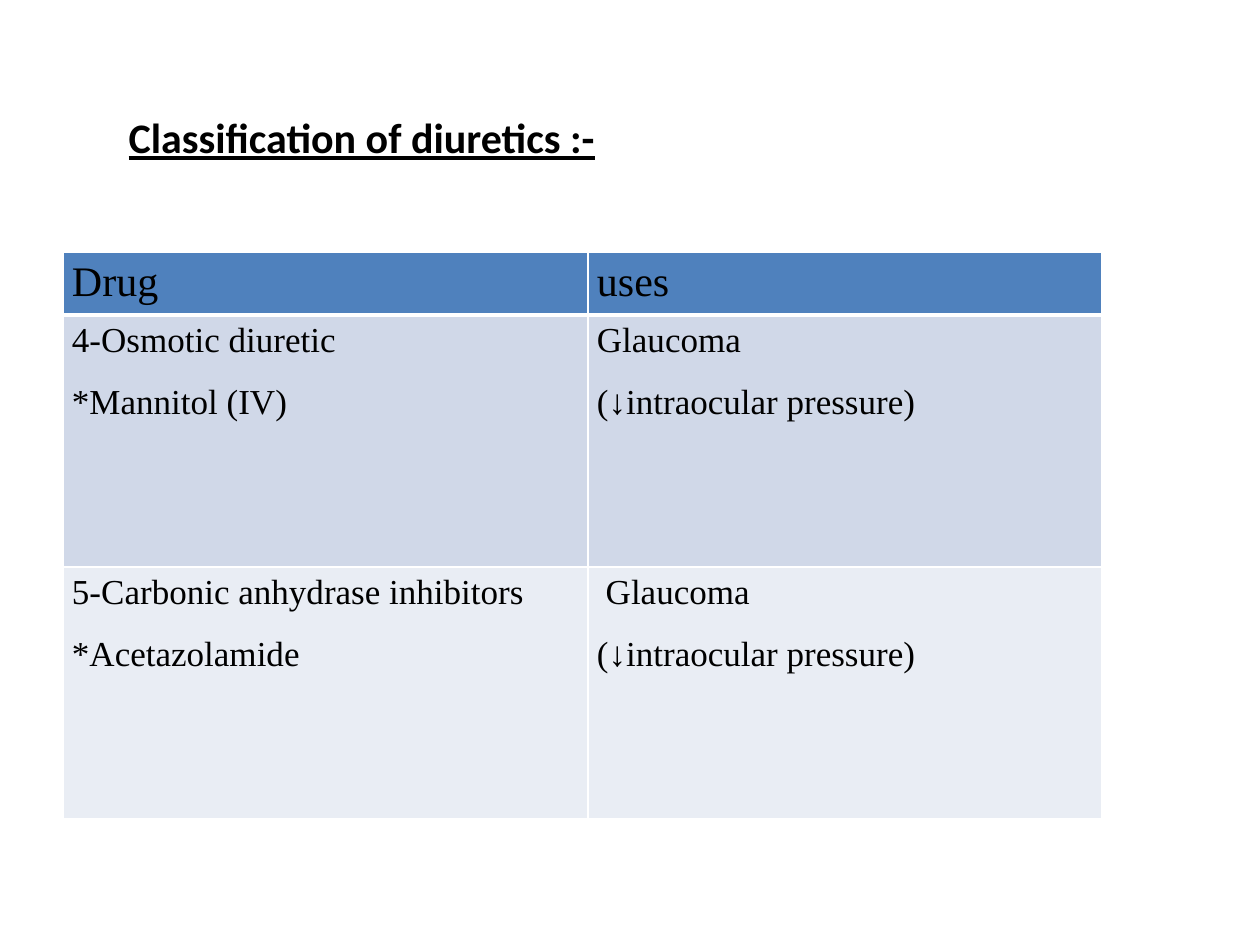
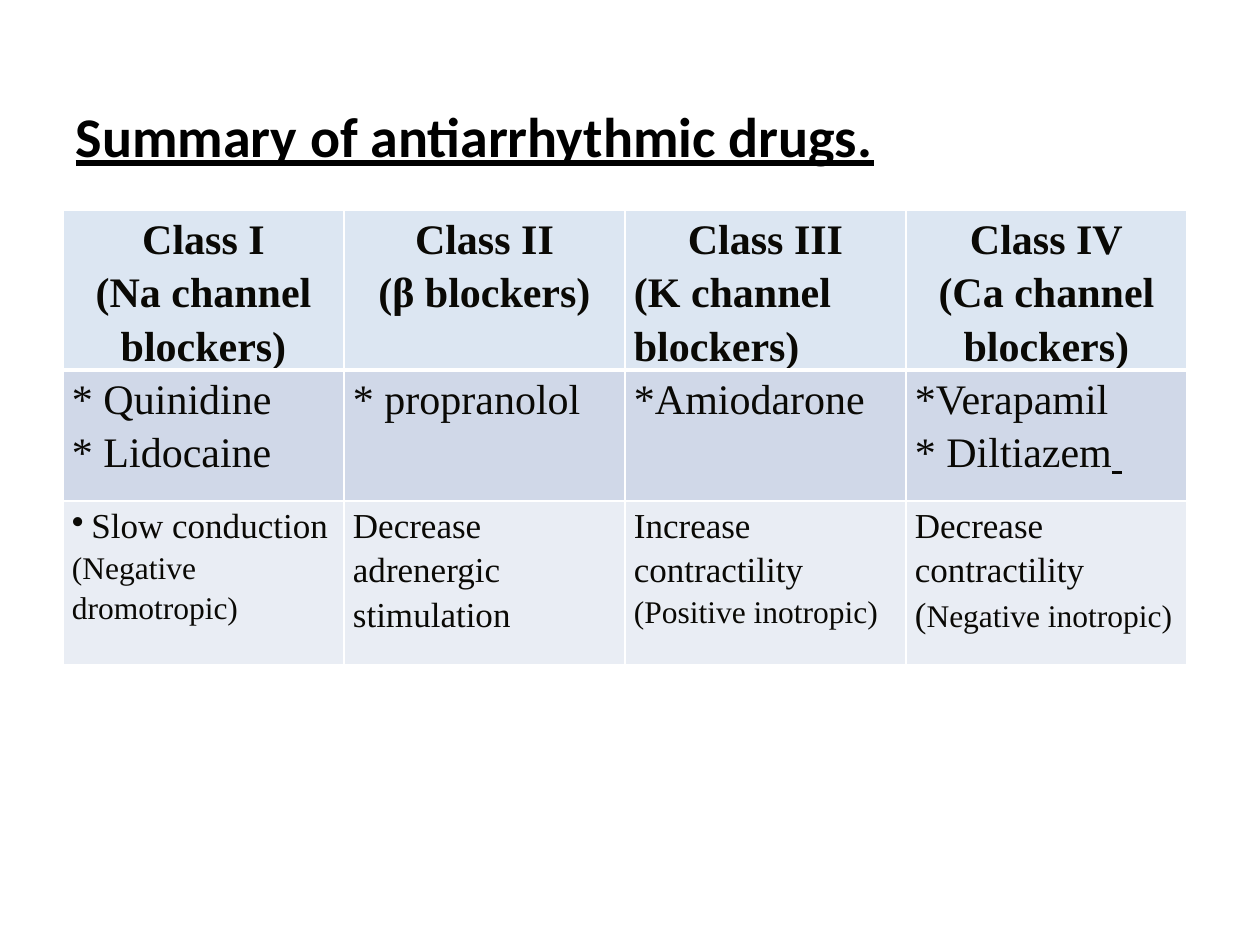
from dataclasses import dataclass

from lxml.etree import SubElement
from pptx import Presentation
from pptx.dml.color import RGBColor
from pptx.enum.text import MSO_ANCHOR as Anchor
from pptx.enum.text import MSO_AUTO_SIZE as AutoSize
from pptx.enum.text import PP_ALIGN as Align
from pptx.oxml import parse_xml
from pptx.oxml.ns import nsdecls, qn
from pptx.util import Emu, Pt

PX = 914400 // 126
COLORS = {
    "title": "000000",
    "drug_text": "000000",
    "class_text": "0A0905",
    "drug_header": "4F81BD",
    "class_header": "DCE6F2",
    "band_dark": "D0D8E8",
    "band_light": "E9EDF4",
    "border": "FFFFFF",
}
TITLE_FONT = "Calibri"
TABLE_FONT = "Times New Roman"
TITLE_ONLY = 5
CELL_INSET = 9


@dataclass
class Span:
    text: str
    size: int
    bold: bool = False
    underline: bool = False


@dataclass
class Para:
    spans: list
    align: Align = Align.LEFT
    bullet: str = ""


@dataclass
class TableStyle:
    header: str
    color: str
    space_after: int = 0


def px(length):
    return Emu(length * PX)


def rgb(name):
    return RGBColor.from_string(COLORS[name])


def line(text, size, align=Align.LEFT, bold=False, bullet=""):
    """A paragraph made of a single span."""
    return Para([Span(text, size, bold)], align, bullet)


def class_head(name, blockers, align=Align.CENTER):
    return [line(name, 24, Align.CENTER, True), line(blockers, 24, align, True)]


def add_span(para, span, font_name, color):
    run = para.add_run()
    run.text = span.text
    font = run.font
    font.name, font.size = font_name, Pt(span.size)
    font.bold, font.underline = span.bold, span.underline
    font.color.rgb = rgb(color)


def add_title(page, text, size, left, top, width, height):
    box = page.shapes.title
    box.left, box.top, box.width, box.height = map(px, (left, top, width, height))
    frame = box.text_frame
    frame.word_wrap = True
    frame.auto_size = AutoSize.NONE
    frame.vertical_anchor = Anchor.TOP
    para = frame.paragraphs[0]
    para.alignment = Align.LEFT
    add_span(para, Span(text, size, True, True), TITLE_FONT, "title")


def set_borders(cell, bottom):
    """White lines on all four sides, placed ahead of the cell's fill."""
    properties = cell._tc.get_or_add_tcPr()
    sides = {"lnL": 1, "lnR": 1, "lnT": 1, "lnB": bottom}
    for place, (side, width) in enumerate(sides.items()):
        properties.insert(place, parse_xml(
            f'<a:{side} {nsdecls("a")} w="{Pt(width)}"><a:solidFill>'
            f'<a:srgbClr val="{COLORS["border"]}"/></a:solidFill></a:{side}>'))


def fill_cell(cell, paras, fill, bottom, style):
    cell.fill.solid()
    cell.fill.fore_color.rgb = rgb(fill)
    cell.margin_left = cell.margin_right = px(CELL_INSET)
    cell.margin_top = cell.margin_bottom = 0
    set_borders(cell, bottom)
    frame = cell.text_frame
    for number, content in enumerate(paras):
        para = frame.add_paragraph() if number else frame.paragraphs[0]
        para.alignment = content.align
        para.line_spacing = 1.15
        para.space_after = Pt(style.space_after)
        if content.bullet:
            SubElement(para._p.get_or_add_pPr(), qn("a:buChar"), char=content.bullet)
        for span in content.spans:
            add_span(para, span, TABLE_FONT, style.color)


def add_drug_table(page, left, top, widths, heights, rows, style):
    table = page.shapes.add_table(
        len(heights), len(widths), px(left), px(top),
        px(sum(widths)), px(sum(heights))).table
    for column, width in zip(table.columns, widths):
        column.width = px(width)
    for row, height in zip(table.rows, heights):
        row.height = px(height)
    fills = [style.header, "band_dark", "band_light"]
    for row, contents, fill in zip(table.rows, rows, fills):
        bottom = 3 if fill == style.header else 1
        for cell, paras in zip(row.cells, contents):
            fill_cell(cell, paras, fill, bottom, style)


def build_diuretics(deck):
    page = deck.slides.add_slide(deck.slide_layouts[TITLE_ONLY])
    add_title(page, "Classification of diuretics :-", 24, 116, 105, 819, 63)
    pressure = line("(↓intraocular pressure)", 20)
    rows = [
        [[line("Drug", 24)], [line("uses", 24)]],
        [[line("4-Osmotic diuretic", 20), line("*Mannitol (IV)", 20)],
         [line("Glaucoma", 20), pressure]],
        [[line("5-Carbonic anhydrase inhibitors", 20), line("*Acetazolamide", 20)],
         [line(" Glaucoma", 20), pressure]],
    ]
    style = TableStyle("drug_header", "drug_text", space_after=10)
    add_drug_table(page, 63, 252, [525, 514], [63, 252, 252], rows, style)


def build_antiarrhythmics(deck):
    page = deck.slides.add_slide(deck.slide_layouts[TITLE_ONLY])
    add_title(page, "Summary of antiarrhythmic drugs.", 32, 63, 95, 1134, 750)
    rows = [
        # Classes
        [class_head("Class I", "(Na channel blockers)"),
         class_head("Class II", "(β blockers)"),
         class_head("Class III", "(K channel blockers)", Align.LEFT),
         class_head("Class IV", "(Ca channel blockers)")],
        # Drugs
        [[line("* Quinidine", 24), line("* Lidocaine", 24)],
         [line("* propranolol", 24)],
         [line("*Amiodarone", 24)],
         [line("*Verapamil", 24),
          Para([Span("* Diltiazem", 24), Span(" ", 24, True, True)])]],
        # Effects
        [[line("Slow conduction", 20, Align.CENTER, bullet="•"),
          line("(Negative dromotropic)", 18)],
         [line("Decrease adrenergic stimulation", 20)],
         [line("Increase contractility", 20), line("(Positive inotropic)", 18)],
         [line("Decrease contractility", 20),
          Para([Span("(", 20), Span("Negative inotropic)", 18)])]],
    ]
    style = TableStyle("class_header", "class_text")
    add_drug_table(page, 63, 210, [281] * 4, [116, 131, 164], rows, style)


def main():
    deck = Presentation()
    deck.slide_width, deck.slide_height = px(1260), px(945)
    build_diuretics(deck)
    build_antiarrhythmics(deck)
    deck.save("out.pptx")


if __name__ == "__main__":
    main()
